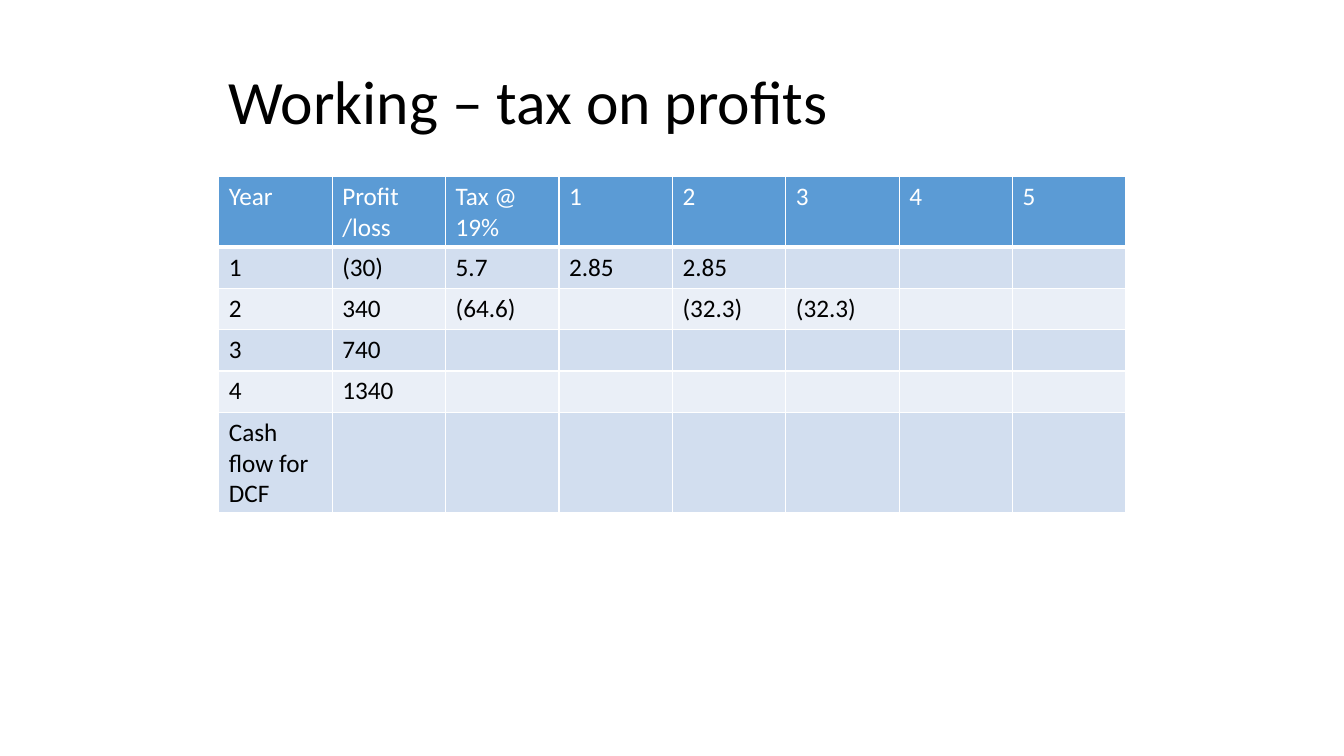
from lxml.etree import SubElement
from pptx import Presentation
from pptx.dml.color import RGBColor
from pptx.enum.text import MSO_ANCHOR
from pptx.oxml.ns import qn
from pptx.util import Inches, Pt

TITLE = "Working – tax on profits"
HEAD = ["Year", "Profit\n/loss", "Tax @ 19%", "1", "2", "3", "4", "5"]
ROWS = [
    ["1", "(30)", "5.7", "2.85", "2.85"],
    ["2", "340", "(64.6)", "", "(32.3)", "(32.3)"],
    ["3", "740"],
    ["4", "1340"],
    ["Cash flow for DCF"],
]
HEIGHTS = [0.7, 0.41, 0.41, 0.41, 0.41, 1]
LEFT, WIDTH = 2.17, 9
THEME = {
    "font": "Calibri", "title": 44, "body": 18,
    "ink": "000000", "white": "FFFFFF", "head": "5B9BD5",
    "bands": ["D2DEEF", "EAEFF7"], "line": 1, "rule": 3,
}


def write(frame, text, size=THEME["body"], color=THEME["ink"], space=1.0):
    frame.word_wrap = True
    frame.text = text
    for para in frame.paragraphs:
        para.line_spacing = space
        font = para.font
        for run in para.runs:
            font = run.font
        font.name = THEME["font"]
        font.size = Pt(size)
        font.bold = False
        font.color.rgb = RGBColor.from_string(color)


def edge(cell, side, width):
    line = SubElement(cell._tc.get_or_add_tcPr(), qn(f"a:ln{side}"), w=str(Pt(width)))
    fill = SubElement(line, qn("a:solidFill"))
    SubElement(fill, qn("a:srgbClr"), val=THEME["white"])


def paint(cell, text, row):
    top = row == 0
    write(cell.text_frame, text, color=THEME["white" if top else "ink"])
    for side in "LRTB":
        edge(cell, side, THEME["rule" if top and side == "B" else "line"])
    cell.fill.solid()
    shade = THEME["head"] if top else THEME["bands"][(row - 1) % 2]
    cell.fill.fore_color.rgb = RGBColor.from_string(shade)


def main():
    deck = Presentation()
    deck.slide_width, deck.slide_height = Inches(13.33), Inches(7.5)
    slide = deck.slides.add_slide(deck.slide_layouts[6])

    box = slide.shapes.add_textbox(Inches(LEFT), Inches(0.52), Inches(WIDTH), Inches(1.03))
    box.text_frame.vertical_anchor = MSO_ANCHOR.MIDDLE
    write(box.text_frame, TITLE, size=THEME["title"], space=0.9)

    data = [HEAD] + ROWS
    count = len(HEAD)
    table = slide.shapes.add_table(
        len(data), count, Inches(LEFT), Inches(1.75), Inches(WIDTH), Inches(sum(HEIGHTS))
    ).table
    for col in table.columns:
        col.width = Inches(WIDTH / count)
    for row, (texts, height) in enumerate(zip(data, HEIGHTS)):
        table.rows[row].height = Inches(height)
        for col in range(count):
            text = texts[col] if col < len(texts) else ""
            paint(table.cell(row, col), text, row)

    deck.save("out.pptx")


if __name__ == "__main__":
    main()
